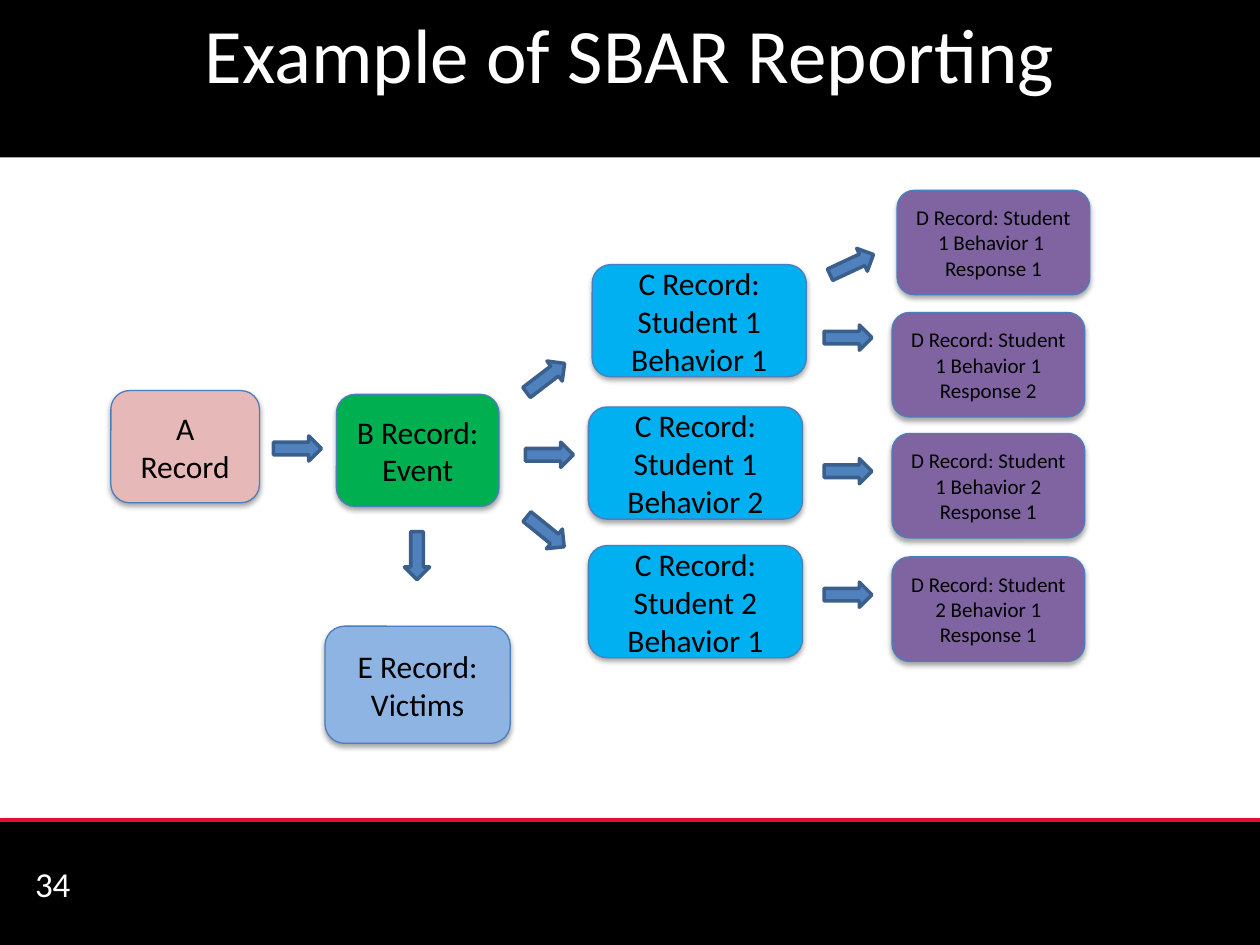
"""Build the SBAR reporting slide: record boxes linked by block arrows."""
from lxml import etree
from pptx import Presentation
from pptx.dml.color import RGBColor
from pptx.enum import shapes, text
from pptx.oxml.ns import qn
from pptx.util import Inches, Pt

COLORS = {
    "black": "000000", "white": "FFFFFF", "red": "E20D38",
    "pink": "E6B9B8", "green": "00B050", "cyan": "00B0F0",
    "purple": "8064A2", "pale": "8EB4E3", "edge": "4B7EBC",
    "arrow": "4F81BD", "arrow_edge": "3A5F8C",
}
TITLE = "Example of SBAR Reporting"
PAGE = "34"
FONT = "Calibri"
KINDS = {  # width, height, fill, text size
    "A": (1.18, 0.89, "pink", 18),
    "B": (1.29, 0.89, "green", 18),
    "C": (1.7, 0.89, "cyan", 18),
    "D": (1.53, 0.83, "purple", 12),
    "E": (1.47, 0.93, "pale", 18),
}
RECORDS = [  # kind, left, top, text
    ("A", 0.88, 3.1, "A Record"),
    ("B", 2.67, 3.13, "B Record: Event"),
    ("C", 4.7, 2.1, "C Record: Student 1 Behavior 1"),
    ("C", 4.67, 3.23, "C Record: Student 1 Behavior 2"),
    ("C", 4.67, 4.33, "C Record: Student 2\nBehavior 1"),
    ("D", 7.12, 1.51, "D Record: Student 1 Behavior 1 \nResponse 1"),
    ("D", 7.08, 2.48, "D Record: Student 1 Behavior 1 Response 2"),
    ("D", 7.08, 3.44, "D Record: Student 1 Behavior 2 Response 1"),
    ("D", 7.08, 4.42, "D Record: Student 2 Behavior 1 Response 1"),
    ("E", 2.58, 4.97, "E Record: Victims"),
]
ARROW_SIZE = (0.38, 0.2)
ARROWS = [  # left, top, rotation
    (2.17, 3.46, 0), (4.14, 2.9, 322.6), (4.17, 3.51, 0), (4.14, 4.12, 39),
    (6.57, 2, 335), (6.54, 2.58, 0), (6.54, 3.64, 0), (6.54, 4.62, 0),
    (3.12, 4.31, 90),
]


def rgb(name):
    return RGBColor.from_string(COLORS[name])


def add_shadow(sp, alpha=35, dist=1.8):
    effects = etree.SubElement(sp._element.spPr, qn("a:effectLst"))
    shadow = etree.SubElement(
        effects, qn("a:outerShdw"), blurRad=str(Pt(3.1)), dist=str(Pt(dist)),
        dir="5400000", rotWithShape="0")
    color = etree.SubElement(shadow, qn("a:srgbClr"), val=COLORS["black"])
    etree.SubElement(color, qn("a:alpha"), val=str(alpha * 1000))


def add_block(slide, preset, box, fill, edge=None, width=0.75):
    sp = slide.shapes.add_shape(preset, *map(Inches, box))
    sp.fill.solid()
    sp.fill.fore_color.rgb = rgb(fill)
    if edge:
        sp.line.color.rgb = rgb(edge)
        sp.line.width = Pt(width)
    else:
        sp.line.fill.background()
    return sp


def write(sp, words, size, color, align, anchor):
    tf = sp.text_frame
    tf.text = words
    tf.word_wrap = True
    tf.auto_size = text.MSO_AUTO_SIZE.NONE
    tf.vertical_anchor = anchor
    for p in tf.paragraphs:
        p.alignment = align
        for r in p.runs:
            r.font.name = FONT
            r.font.size = Pt(size)
            r.font.color.rgb = rgb(color)


def main():
    prs = Presentation()
    prs.slide_width, prs.slide_height = Inches(10), Inches(7.5)
    slide = prs.slides.add_slide(prs.slide_layouts[5])
    preset = shapes.MSO_SHAPE
    align, anchor = text.PP_ALIGN, text.MSO_ANCHOR

    title = slide.shapes.title
    title.left, title.top, title.width, title.height = map(Inches, (0, 0, 10, 1.25))
    title.fill.solid()
    title.fill.fore_color.rgb = rgb("black")
    write(title, TITLE, 44, "white", align.CENTER, anchor.TOP)

    footer = add_block(slide, preset.RECTANGLE, (0, 6.51, 10, 1), "black")
    add_shadow(footer)
    rule = slide.shapes.add_connector(
        shapes.MSO_CONNECTOR.STRAIGHT, *map(Inches, (0, 6.51, 10, 6.51)))
    rule.line.color.rgb = rgb("red")
    rule.line.width = Pt(2)
    add_shadow(rule, 38, 1.6)
    number = slide.shapes.add_textbox(*map(Inches, (0.18, 6.81, 2.33, 0.4)))
    write(number, PAGE, 20, "white", align.LEFT, anchor.MIDDLE)

    for kind, left, top, words in RECORDS:
        width, height, fill, size = KINDS[kind]
        sp = add_block(slide, preset.ROUNDED_RECTANGLE,
                       (left, top, width, height), fill, "edge")
        add_shadow(sp)
        write(sp, words, size, "black", align.CENTER, anchor.MIDDLE)

    for left, top, rotation in ARROWS:
        sp = add_block(slide, preset.RIGHT_ARROW, (left, top, *ARROW_SIZE),
                       "arrow", "arrow_edge", 2)
        sp.rotation = rotation
        sp.shadow.inherit = False

    prs.save("out.pptx")


if __name__ == "__main__":
    main()
